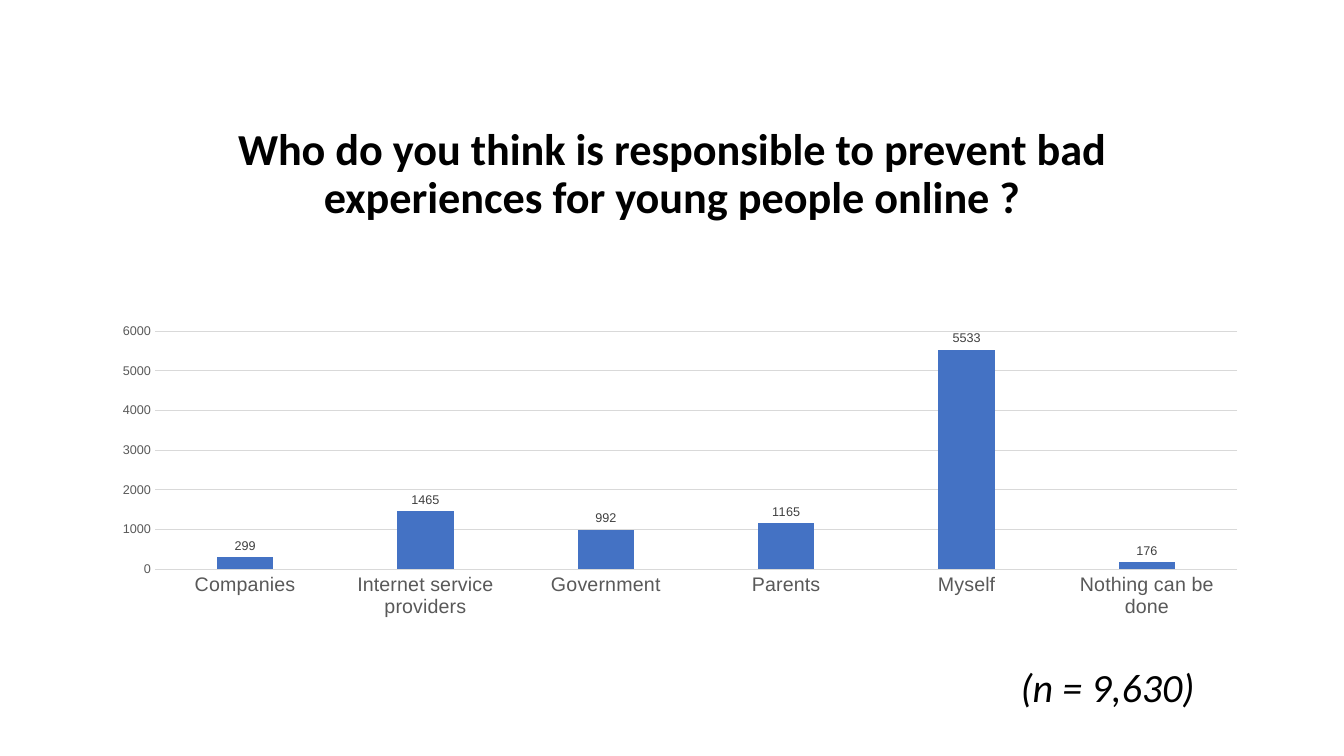
from lxml import etree
from pptx import Presentation
from pptx.chart.data import CategoryChartData
from pptx.dml.color import RGBColor
from pptx.enum.chart import XL_CHART_TYPE, XL_LABEL_POSITION, XL_TICK_MARK
from pptx.enum.text import MSO_ANCHOR, MSO_AUTO_SIZE, PP_ALIGN
from pptx.oxml.ns import qn
from pptx.util import Inches, Pt

COLUMNS = XL_CHART_TYPE.COLUMN_CLUSTERED
OUTSIDE_END = XL_LABEL_POSITION.OUTSIDE_END
NO_TICK = XL_TICK_MARK.NONE
MIDDLE = MSO_ANCHOR.MIDDLE
NO_AUTOFIT = MSO_AUTO_SIZE.NONE
CENTER = PP_ALIGN.CENTER
TITLE_ONLY = 5

COLORS = {
    "text": "000000",
    "axis_text": "595959",
    "value_text": "404040",
    "grid": "D9D9D9",
    "bar": "4472C4",
}
RESPONSES = {
    "Companies": 299,
    "Internet service providers": 1465,
    "Government": 992,
    "Parents": 1165,
    "Myself": 5533,
    "Nothing can be done": 176,
}
PLOT_AREA = {"x": 0.108, "y": 0.232, "w": 0.867, "h": 0.524}


def style_font(font, size, color, name="Arial", bold=False, italic=False):
    font.name = name
    font.size = Pt(size)
    font.bold = bold
    font.italic = italic
    font.color.rgb = RGBColor.from_string(COLORS[color])


def write_text(shape, text, **font_format):
    frame = shape.text_frame
    frame.word_wrap = True
    frame.auto_size = NO_AUTOFIT
    frame.vertical_anchor = MIDDLE
    paragraph = frame.paragraphs[0]
    paragraph.alignment = CENTER
    paragraph.line_spacing = 0.9
    run = paragraph.add_run()
    run.text = text
    style_font(run.font, color="text", name="Calibri", **font_format)


presentation = Presentation()
presentation.slide_width = Inches(13.33)
presentation.slide_height = Inches(7.5)
slide = presentation.slides.add_slide(presentation.slide_layouts[TITLE_ONLY])

# Sample size and question
sample_size = slide.shapes.add_textbox(
    Inches(9.56), Inches(6.12), Inches(2.85), Inches(1.45))
write_text(sample_size, "(n = 9,630)", size=28.6, italic=True)

question = slide.shapes.title
question.left, question.top = Inches(1.78), Inches(1.09)
question.width, question.height = Inches(9.77), Inches(1.29)
write_text(
    question,
    "Who do you think is responsible to prevent bad experiences for young people online ?",
    size=31.6, bold=True)

# Responses chart
response_data = CategoryChartData()
response_data.categories = list(RESPONSES)
response_data.add_series("Series 1", list(RESPONSES.values()))
chart = slide.shapes.add_chart(
    COLUMNS, Inches(0.2), Inches(2.24), Inches(12.38), Inches(4.51), response_data).chart
chart.has_title = False
chart.has_legend = False
style_font(chart.font, 10, "text")

bars = chart.plots[0]
bars.gap_width = 219
bars.overlap = -27
bars.vary_by_categories = False
bar_fill = bars.series[0].format.fill
bar_fill.solid()
bar_fill.fore_color.rgb = RGBColor.from_string(COLORS["bar"])

bars.has_data_labels = True
counts = bars.data_labels
counts.show_value = True
counts.position = OUTSIDE_END
style_font(counts.font, 9, "value_text")

groups, scale = chart.category_axis, chart.value_axis
for axis, size in ((groups, 14), (scale, 9)):
    axis.major_tick_mark = NO_TICK
    axis.minor_tick_mark = NO_TICK
    style_font(axis.tick_labels.font, size, "axis_text")
scale.minimum_scale = 0
scale.maximum_scale = 6000
scale.major_unit = 1000
scale.has_major_gridlines = True
scale.format.line.fill.background()
for line in (groups.format.line, scale.major_gridlines.format.line):
    line.width = Pt(0.75)
    line.color.rgb = RGBColor.from_string(COLORS["grid"])

# Fixed inner plot area, as fractions of the chart
plot_area = chart.element.find(".//" + qn("c:plotArea"))
for automatic_layout in plot_area.findall(qn("c:layout")):
    plot_area.remove(automatic_layout)
layout = etree.Element(qn("c:layout"))
plot_area.insert(0, layout)
manual = etree.SubElement(layout, qn("c:manualLayout"))
settings = {"layoutTarget": "inner", "xMode": "edge", "yMode": "edge", **PLOT_AREA}
for tag, value in settings.items():
    etree.SubElement(manual, qn("c:" + tag)).set("val", str(value))

presentation.save("out.pptx")
